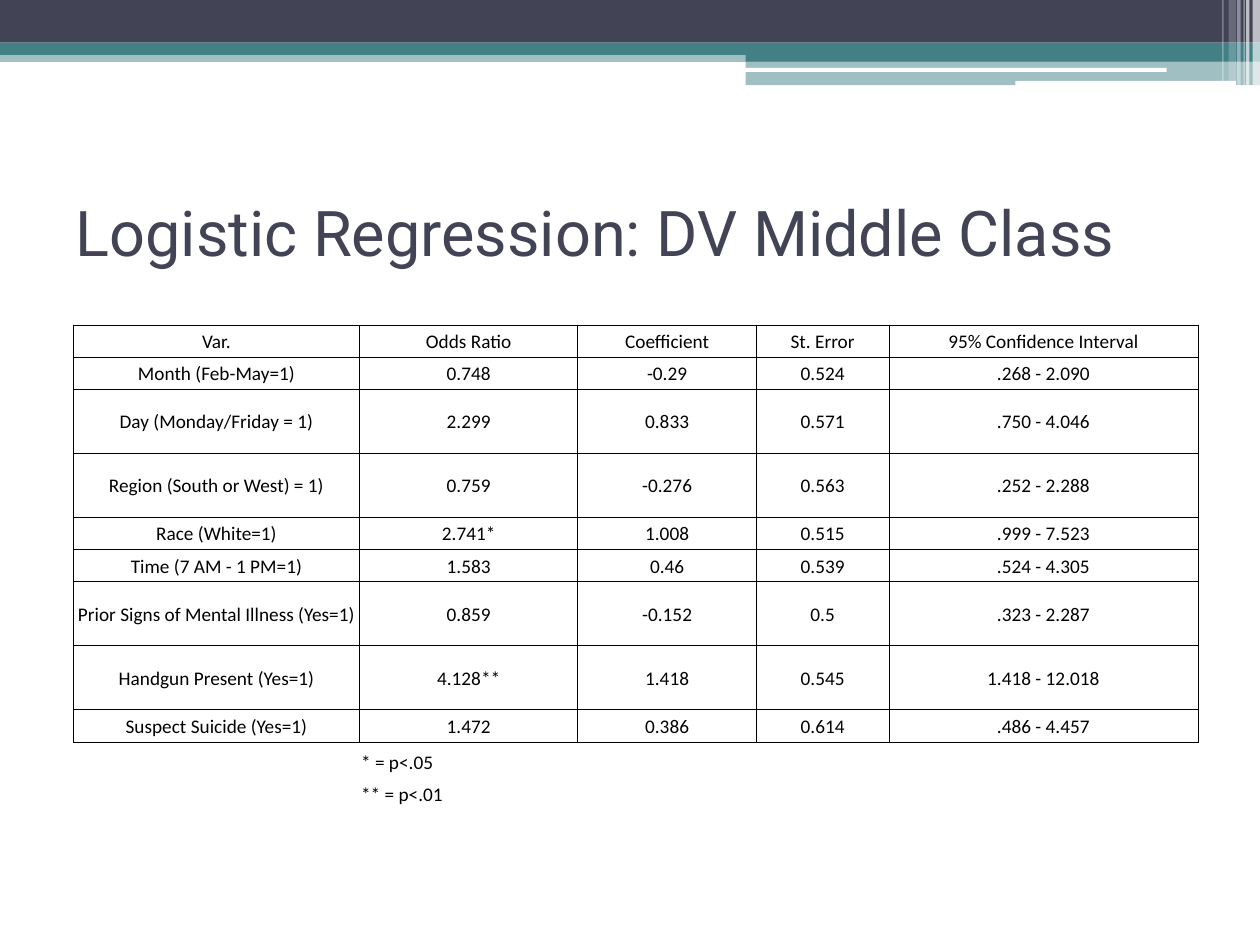
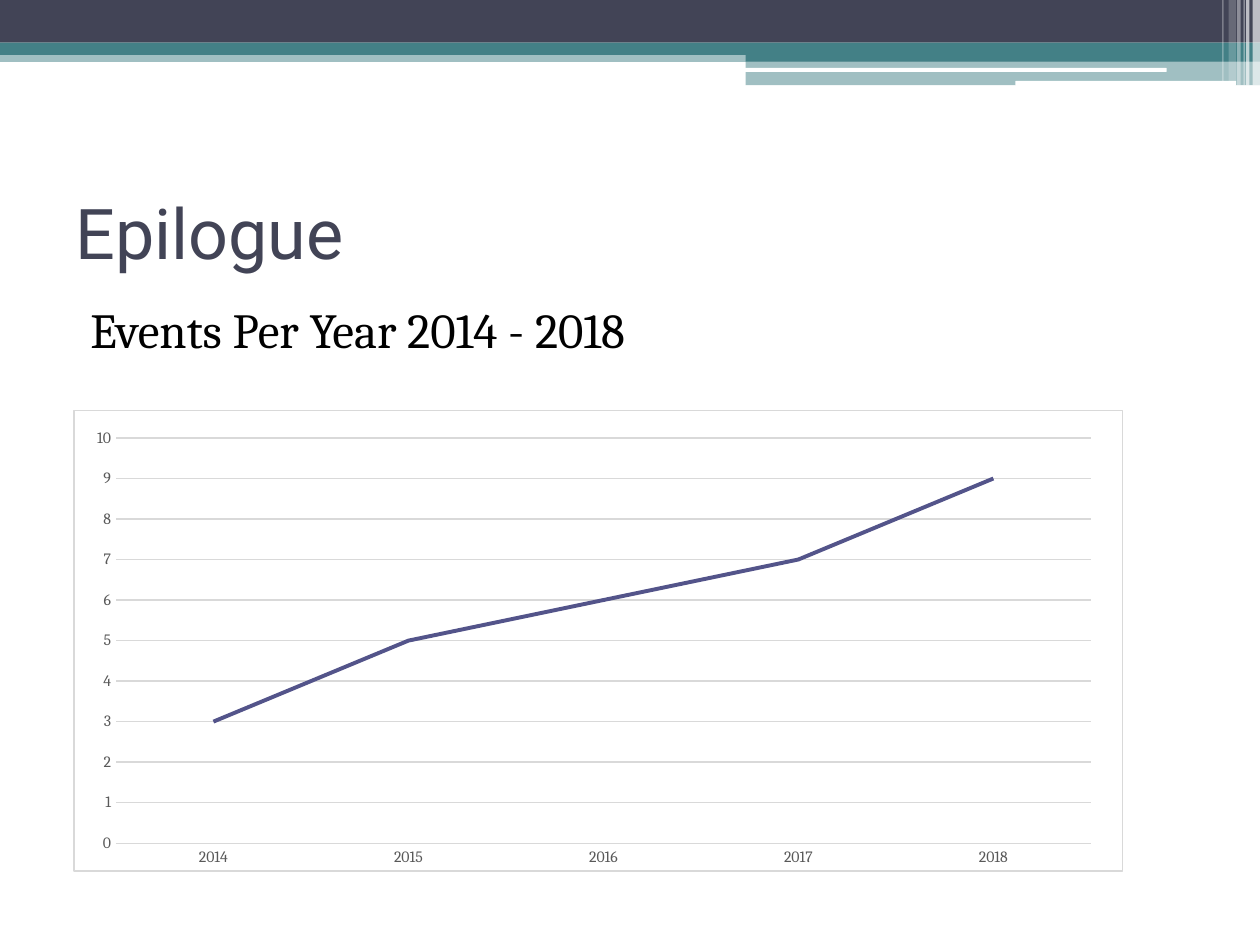
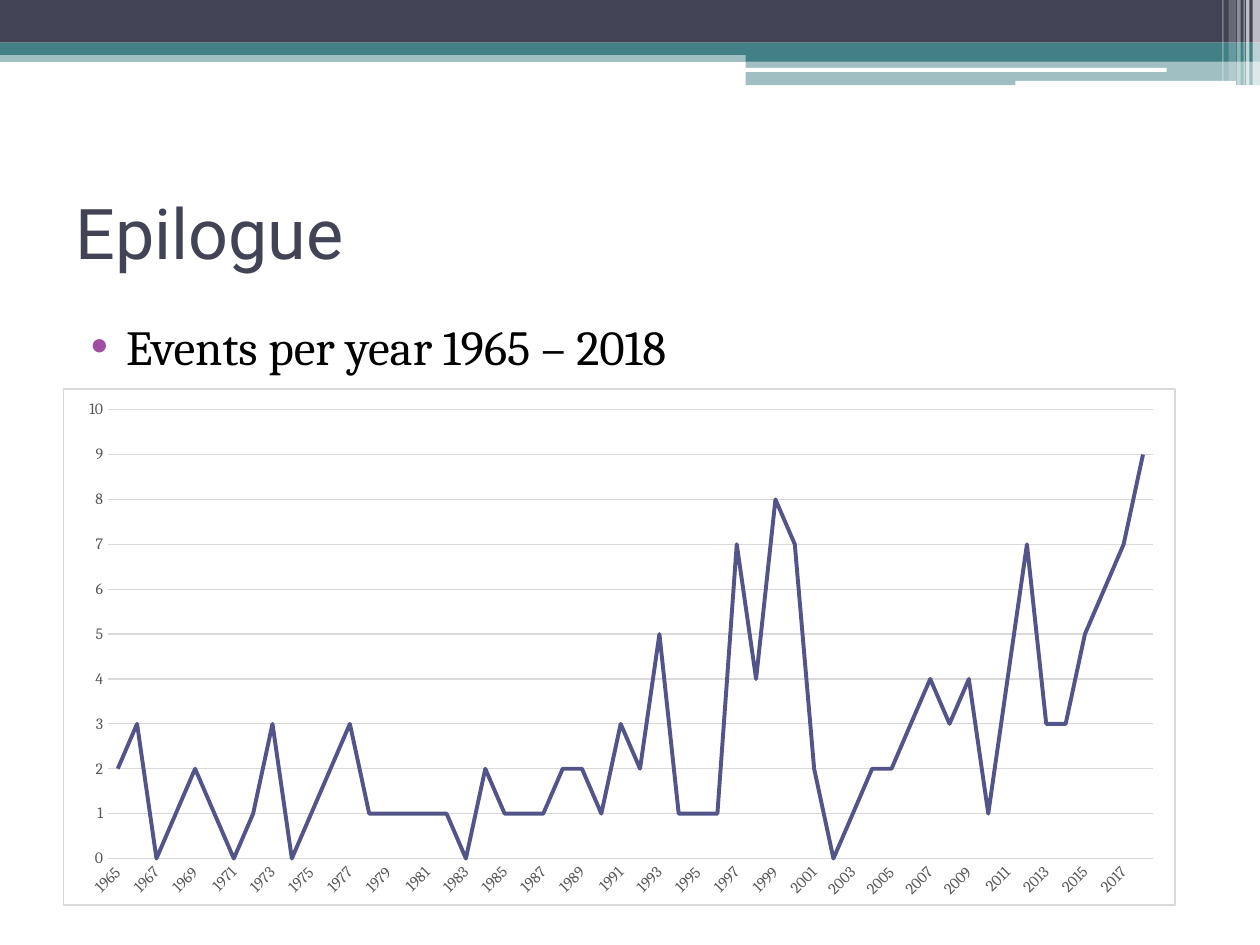
"""Build three slides on a regression table and yearly event counts."""
from dataclasses import dataclass

from lxml.etree import SubElement
from pptx import Presentation
from pptx.chart.data import CategoryChartData
from pptx.dml.color import RGBColor
from pptx.enum.chart import XL_CHART_TYPE as ChartType, XL_TICK_MARK as TickMark
from pptx.enum.shapes import MSO_SHAPE as Preset
from pptx.enum.text import MSO_ANCHOR as Anchor, MSO_AUTO_SIZE as AutoSize, PP_ALIGN as Align
from pptx.oxml import parse_xml
from pptx.oxml.ns import nsdecls, qn
from pptx.util import Cm, Pt


@dataclass(frozen=True)
class Theme:
    navy: str = "424456"
    teal: str = "438086"
    white: str = "FFFFFF"
    black: str = "000000"
    purple: str = "A04DA3"
    indigo: str = "53548A"
    grey: str = "595959"
    pale: str = "D9D9D9"
    title_font: str = "Roboto"
    body_font: str = "Cambria"
    table_font: str = "Calibri"
    title_size: float = 40
    long_title_size: float = 36
    body_size: float = 28
    table_size: float = 11
    chart_size: float = 10
    axis_size: float = 9
    hairline: float = 0.5
    thin: float = 0.75
    thick: float = 2.25


THEME = Theme()
TITLE_AND_BODY, TITLE_ONLY = 1, 5

BAND = [
    (Preset.RECTANGLE, 0, 1.02, 25.4, 0.23, THEME.teal, 50),
    (Preset.RECTANGLE, 0, 0, 25.4, 0.86, THEME.navy, 100),
    (Preset.RECTANGLE, 0, 0.86, 25.4, 0.25, THEME.teal, 100),
    (Preset.RECTANGLE, 15.03, 0.99, 10.37, 0.25, THEME.teal, 100),
    (Preset.RECTANGLE, 15.03, 1.23, 10.37, 0.49, THEME.teal, 50),
    (Preset.ROUNDED_RECTANGLE, 15.01, 1.37, 8.51, 0.08, THEME.white, 100),
    (Preset.ROUNDED_RECTANGLE, 20.47, 1.63, 4.45, 0.1, THEME.white, 100),
]
STRIPES = [
    (25.25, 0.15, 1.73, 65),
    (25.12, 0.07, 1.73, 65),
    (25.07, 0.02, 1.73, 60),
    (24.94, 0.07, 1.73, 40),
    (24.77, 0.15, 1.63, 20),
    (24.64, 0.03, 1.63, 30),
]
BAND += [(Preset.RECTANGLE, left, 0, width, height, THEME.white, opacity)
         for left, width, height, opacity in STRIPES]

REGRESSION = [
    ("Var.", "Odds Ratio", "Coefficient", "St. Error", "95% Confidence Interval"),
    ("Month (Feb-May=1)", "0.748", "-0.29", "0.524", ".268 - 2.090"),
    ("Day (Monday/Friday = 1)", "2.299", "0.833", "0.571", ".750 - 4.046"),
    ("Region (South or West) = 1)", "0.759", "-0.276", "0.563", ".252 - 2.288"),
    ("Race (White=1)", "2.741*", "1.008", "0.515", ".999 - 7.523"),
    ("Time (7 AM - 1 PM=1)", "1.583", "0.46", "0.539", ".524 - 4.305"),
    ("Prior Signs of Mental Illness (Yes=1)", "0.859", "-0.152", "0.5", ".323 - 2.287"),
    ("Handgun Present (Yes=1)", "4.128**", "1.418", "0.545", "1.418 - 12.018"),
    ("Suspect Suicide (Yes=1)", "1.472", "0.386", "0.614", ".486 - 4.457"),
]
LEGEND = [("", "* = p<.05", "", "", ""), ("", "** = p<.01", "", "", "")]
COLUMN_WIDTHS = [5.77, 4.4, 3.6, 2.67, 6.23]
TALL_ROWS = {2, 3, 6, 7}

FIRST_YEAR = 1965
EVENTS = [2, 3, 0, 1, 2, 1, 0, 1, 3, 0, 1, 2, 3, 1, 1, 1, 1, 1, 0, 2, 1, 1, 1, 2, 2, 1, 3,
          2, 5, 1, 1, 1, 7, 4, 8, 7, 2, 0, 1, 2, 2, 3, 4, 3, 4, 1, 4, 7, 3, 3, 5, 6, 7, 9]


def rgb(code):
    return RGBColor.from_string(code)


def style_font(font, size, face, color):
    font.size, font.name = Pt(size), face
    font.color.rgb = rgb(color)


def write(paragraph, text, *, size, face, color=THEME.black, align=Align.LEFT, before=0):
    paragraph.alignment = align
    paragraph.space_before = Pt(before)
    if text:
        run = paragraph.add_run()
        run.text = text
        style_font(run.font, size, face, color)
    else:
        SubElement(paragraph._p, qn("a:endParaRPr"), sz=str(size * 100))


def place(shape, left, top, width, height):
    shape.left, shape.top, shape.width, shape.height = map(Cm, (left, top, width, height))


def set_borders(cell, sides):
    properties = cell._tc.get_or_add_tcPr()
    for position, side in enumerate("LRTB"):
        border = parse_xml(f'<a:ln{side} {nsdecls("a")} w="{Pt(THEME.hairline)}"/>')
        if side in sides:
            fill = SubElement(border, qn("a:solidFill"))
            SubElement(fill, qn("a:srgbClr"), val=THEME.black)
        else:
            SubElement(border, qn("a:noFill"))
        properties.insert(position, border)


class Deck:
    def __init__(self, theme):
        self.theme = theme
        self.presentation = Presentation()
        self.presentation.slide_width = Cm(25.4)
        self.presentation.slide_height = Cm(19.05)
        self.slide = None

    def add_slide(self, layout):
        layouts = self.presentation.slide_layouts
        self.slide = self.presentation.slides.add_slide(layouts[layout])

    def move_band_to_master(self):
        master_tree = self.presentation.slide_master.shapes.element
        for order, (preset, left, top, width, height, color, opacity) in enumerate(BAND):
            strip = self.slide.shapes.add_shape(preset, *map(Cm, (left, top, width, height)))
            strip.shadow.inherit = False
            strip.line.fill.background()
            strip.fill.solid()
            strip.fill.fore_color.rgb = rgb(color)
            if opacity < 100:
                tint = strip.element.spPr.find(f".//{qn('a:srgbClr')}")
                SubElement(tint, qn("a:alpha"), val=str(opacity * 1000))
            strip.element.nvSpPr.cNvPr.set("id", str(100 + order))
            master_tree.insert(2 + order, strip.element)

    def title(self, text, size):
        heading = self.slide.shapes.title
        place(heading, 1.27, 3.18, 22.86, 2.97)
        heading.text_frame.auto_size = AutoSize.NONE
        heading.text_frame.vertical_anchor = Anchor.MIDDLE
        write(heading.text_frame.paragraphs[0], text, size=size,
              face=self.theme.title_font, color=self.theme.navy)

    def body(self, text, top, height, *, margin, indent=0, bullet=None):
        caption = self.slide.placeholders[1]
        place(caption, 1.27, top, 22.86, height)
        caption.text_frame.auto_size = AutoSize.NONE
        paragraph = caption.text_frame.paragraphs[0]
        write(paragraph, text, size=self.theme.body_size, face=self.theme.body_font, before=3)
        properties = paragraph._p.get_or_add_pPr()
        properties.set("marL", str(Cm(margin)))
        properties.set("indent", str(Cm(indent)))
        if bullet:
            tint = SubElement(properties, qn("a:buClr"))
            SubElement(tint, qn("a:srgbClr"), val=self.theme.purple)
            SubElement(properties, qn("a:buChar"), char=bullet)
        else:
            SubElement(properties, qn("a:buNone"))

    def table(self, rows, legend, left, top):
        content = rows + legend
        heights = [1.29 if index in TALL_ROWS else 0.65 for index in range(len(content))]
        frame = self.slide.shapes.add_table(
            len(content), len(COLUMN_WIDTHS), Cm(left), Cm(top),
            Cm(sum(COLUMN_WIDTHS)), Cm(sum(heights)))
        grid = frame.table
        grid.first_row = grid.horz_banding = False
        for column, width in zip(grid.columns, COLUMN_WIDTHS):
            column.width = Cm(width)
        for index, (row, texts) in enumerate(zip(grid.rows, content)):
            row.height = Cm(heights[index])
            in_grid = index < len(rows)
            sides = "LRTB" if in_grid else "T" if index == len(rows) else ""
            for cell, text in zip(row.cells, texts):
                cell.margin_left = cell.margin_right = cell.margin_top = Cm(0.03)
                cell.margin_bottom = 0
                cell.vertical_anchor = Anchor.MIDDLE if in_grid else Anchor.BOTTOM
                cell.fill.background()
                set_borders(cell, sides)
                write(cell.text_frame.paragraphs[0], text, size=self.theme.table_size,
                      face=self.theme.table_font,
                      align=Align.CENTER if in_grid else Align.LEFT)

    def line_chart(self, first_year, counts, box, plot_box, label_angle=0):
        theme = self.theme
        data = CategoryChartData()
        data.categories = [str(first_year + offset) for offset in range(len(counts))]
        data.add_series("Series 1", counts)
        chart = self.slide.shapes.add_chart(ChartType.LINE, *map(Cm, box), data).chart
        chart.has_title = chart.has_legend = False
        style_font(chart.font, theme.chart_size, theme.body_font, theme.black)
        plot = chart.plots[0]
        plot.vary_by_categories = False
        events = plot.series[0]
        events.smooth = False
        events.format.line.color.rgb = rgb(theme.indigo)
        events.format.line.width = Pt(theme.thick)
        years, scale = chart.category_axis, chart.value_axis
        for axis in (years, scale):
            axis.major_tick_mark = axis.minor_tick_mark = TickMark.NONE
            style_font(axis.tick_labels.font, theme.axis_size, theme.body_font, theme.grey)
        scale.minimum_scale, scale.maximum_scale, scale.major_unit = 0, 10, 1
        scale.format.line.fill.background()
        scale.has_major_gridlines = True
        for rule in (years.format.line, scale.major_gridlines.format.line):
            rule.color.rgb = rgb(theme.pale)
            rule.width = Pt(theme.thin)
        if label_angle:
            labels = chart.element.find(f".//{qn('c:catAx')}/{qn('c:txPr')}/{qn('a:bodyPr')}")
            labels.set("rot", str(label_angle * 60000))
            labels.set("vert", "horz")
        self.frame_chart(chart)
        self.set_plot_area(chart, plot_box)

    def frame_chart(self, chart):
        theme = self.theme
        chart.element.find(qn("c:chart")).addnext(parse_xml(
            f'<c:spPr {nsdecls("c", "a")}>'
            f'<a:solidFill><a:srgbClr val="{theme.white}"/></a:solidFill>'
            f'<a:ln w="{Pt(theme.thin)}"><a:solidFill><a:srgbClr val="{theme.pale}"/>'
            '</a:solidFill></a:ln></c:spPr>'))

    def set_plot_area(self, chart, plot_box):
        area = chart.element.find(f".//{qn('c:plotArea')}")
        for layout in area.findall(qn("c:layout")):
            area.remove(layout)
        layout = parse_xml(f'<c:layout {nsdecls("c")}/>')
        manual = SubElement(layout, qn("c:manualLayout"))
        settings = [("layoutTarget", "inner"), ("xMode", "edge"), ("yMode", "edge")]
        for tag, value in settings + list(zip("xywh", plot_box)):
            SubElement(manual, qn(f"c:{tag}"), val=str(value))
        area.insert(0, layout)


def main():
    deck = Deck(THEME)

    deck.add_slide(TITLE_ONLY)
    deck.move_band_to_master()
    deck.title("Logistic Regression: DV Middle Class", THEME.long_title_size)
    deck.table(REGRESSION, LEGEND, 1.48, 6.55)

    deck.add_slide(TITLE_AND_BODY)
    deck.title("Epilogue", THEME.title_size)
    deck.body("Events Per Year 2014 - 2018", 5.92, 12.34, margin=0.3)
    deck.line_chart(2014, EVENTS[2014 - FIRST_YEAR:], (1.48, 8.26, 21.16, 9.31),
                    (0.04, 0.06, 0.93, 0.88))

    deck.add_slide(TITLE_AND_BODY)
    deck.title("Epilogue", THEME.title_size)
    deck.body("Events per year 1965 – 2018", 6.25, 12.01, margin=1.02, indent=-0.71, bullet="•")
    deck.line_chart(FIRST_YEAR, EVENTS, (1.27, 7.83, 22.43, 10.43),
                    (0.04, 0.04, 0.94, 0.87), label_angle=-45)

    deck.presentation.save("out.pptx")


if __name__ == "__main__":
    main()
